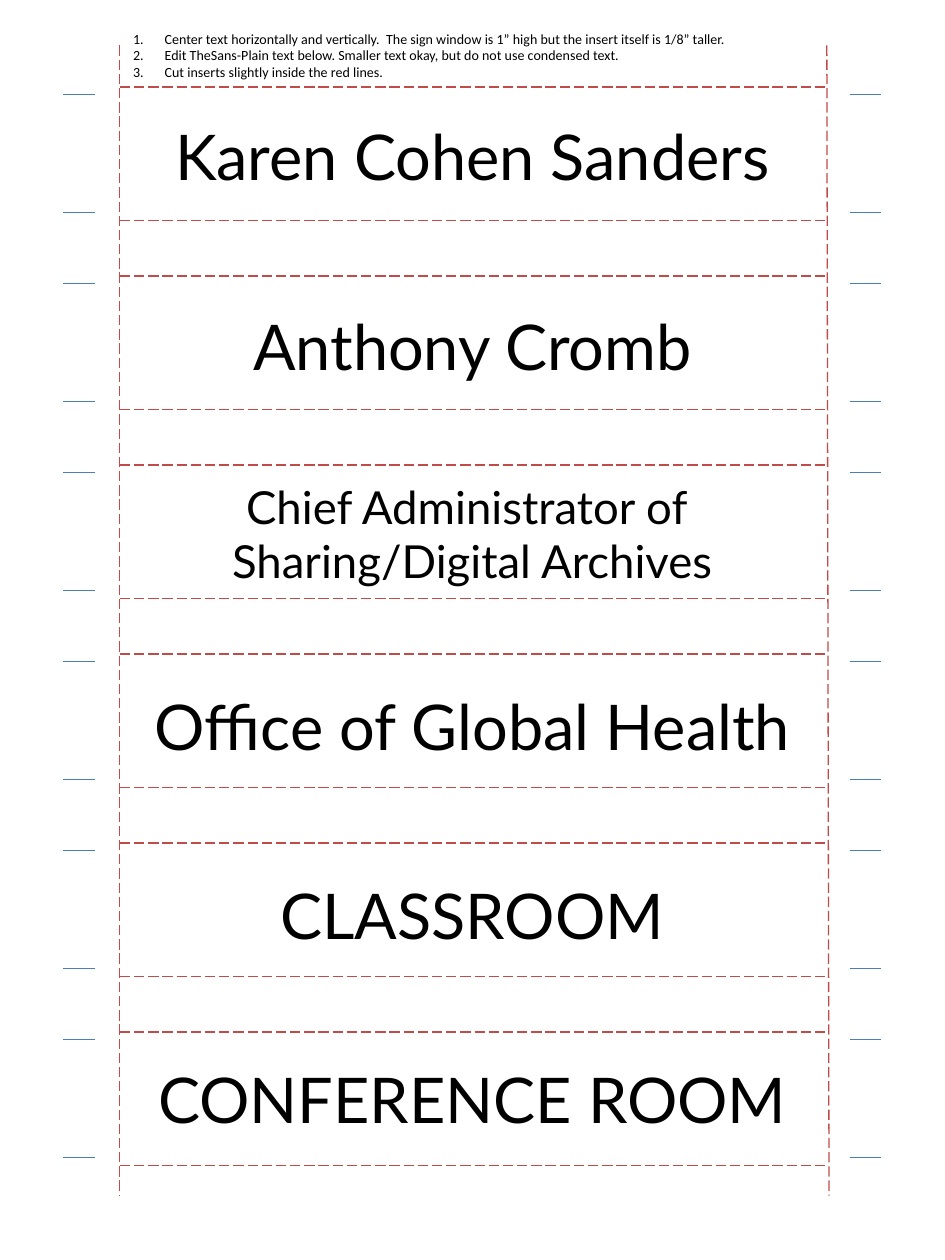
from dataclasses import dataclass

from pptx import Presentation
from pptx import util as u
from pptx.dml.color import RGBColor
from pptx.enum import dml, shapes, text
from pptx.oxml.ns import qn
from lxml import etree

Pt = u.Pt


@dataclass(frozen=True)
class Theme:
    cut: RGBColor = RGBColor(0xBF, 0x4C, 0x48)
    tick: RGBColor = RGBColor(0x4B, 0x7E, 0xBC)
    ink: RGBColor = RGBColor(0, 0, 0)
    sign_font: str = "Lato"
    note_font: str = "Calibri"
    name_size: float = 36
    title_size: float = 26
    note_size: float = 8
    line_width: float = 0.75


T = Theme()

INSTRUCTIONS = [
    "Center text horizontally and vertically.  The sign window is 1” high but the insert itself is 1/8” taller.",
    "Edit TheSans-Plain text below. Smaller text okay, but do not use condensed text.",
    "Cut inserts slightly inside the red lines.",
]
SIGNS = [
    (["Karen Cohen Sanders"], T.name_size, 63.5, 50.5),
    (["Anthony Cromb"], T.name_size, 172, 50.5),
    (["Chief Administrator of ", "Sharing/Digital Archives"], T.title_size, 269.5, 70.5),
    (["Office of Global Health"], T.name_size, 389.5, 50.5),
    (["CLASSROOM"], T.name_size, 497, 50.5),
    (["CONFERENCE ROOM"], T.name_size, 602.5, 50.5),
]

PITCH = 108
CUT_LEFT, CUT_RIGHT = 68.5, 473.25
CUT_YS = (49.75, 126)
TICK_YS = (54, 121.5)
TICK_XS = ((36.25, 54.25), (485.5, 503.5))
SIDES = (((68.5, 26), (68.5, 683.25)), ((472.5, 26), (473.75, 683.25)))


def add_line(s, start, end, color, dashed=False):
    ln = s.shapes.add_connector(shapes.MSO_CONNECTOR.STRAIGHT, *map(Pt, start + end))
    ln.line.color.rgb = color
    ln.line.width = Pt(T.line_width)
    if dashed:
        ln.line.dash_style = dml.MSO_LINE.LONG_DASH
    etree.SubElement(ln._element.spPr, qn("a:effectLst"))


def add_text(s, box, lines, font, size, numbered=False):
    sp = s.shapes.add_textbox(*map(Pt, box))
    tf = sp.text_frame
    tf.word_wrap = True
    tf.auto_size = text.MSO_AUTO_SIZE.SHAPE_TO_FIT_TEXT
    if not numbered:
        tf.vertical_anchor = text.MSO_ANCHOR.MIDDLE
    for i, line in enumerate(lines):
        p = tf.paragraphs[0] if i == 0 else tf.add_paragraph()
        if numbered:
            pPr = p._p.get_or_add_pPr()
            pPr.set("marL", str(Pt(18)))
            pPr.set("indent", str(-Pt(18)))
            etree.SubElement(pPr, qn("a:buFont"), typeface="+mj-lt")
            etree.SubElement(pPr, qn("a:buAutoNum"), type="arabicPeriod")
        else:
            p.alignment = text.PP_ALIGN.CENTER
        r = p.add_run()
        r.text = line
        r.font.name = font
        r.font.size = Pt(size)
        r.font.color.rgb = T.ink


def main():
    prs = Presentation()
    prs.slide_width, prs.slide_height = Pt(540), Pt(720)
    s = prs.slides.add_slide(prs.slide_layouts[6])

    for start, end in SIDES:
        add_line(s, start, end, T.cut, dashed=True)
    for i, (lines, size, top, height) in enumerate(SIGNS):
        for y in CUT_YS:
            cut_y = y + i * PITCH
            add_line(s, (CUT_LEFT, cut_y), (CUT_RIGHT, cut_y), T.cut, dashed=True)
        for y in TICK_YS:
            tick_y = y + i * PITCH
            for x1, x2 in TICK_XS:
                add_line(s, (x1, tick_y), (x2, tick_y), T.tick)
        add_text(s, (54, top, 432, height), lines, T.sign_font, size)
    add_text(s, (69, 13.75, 402.5, 36), INSTRUCTIONS, T.note_font, T.note_size, numbered=True)

    prs.save("out.pptx")


if __name__ == "__main__":
    main()
